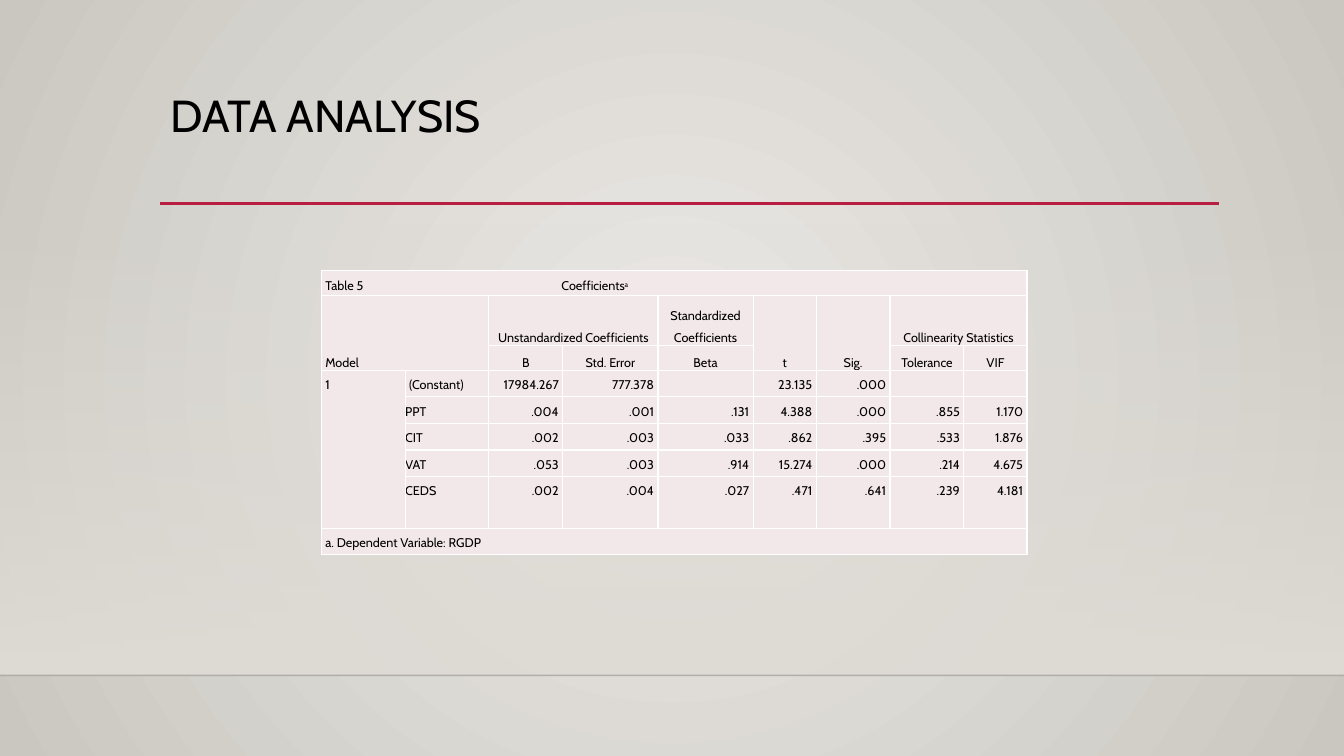
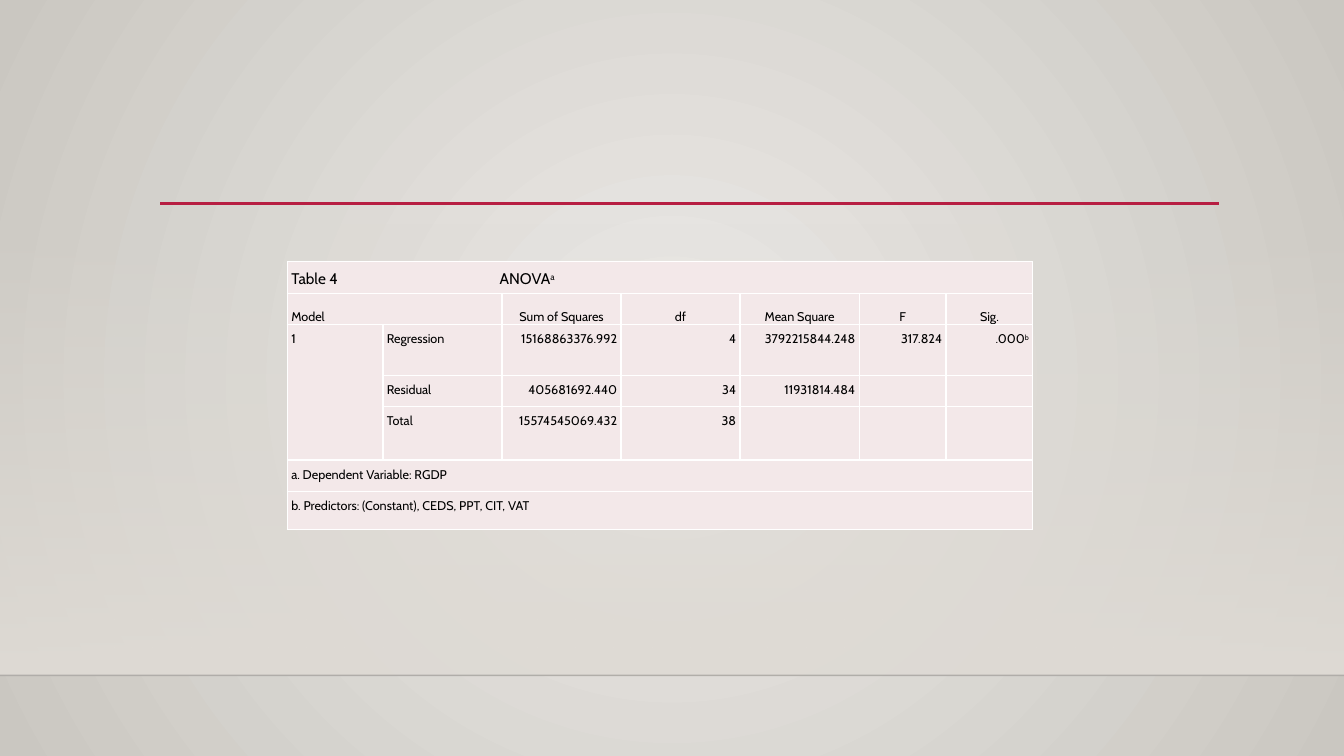
from itertools import product

from lxml.etree import SubElement
from pptx import Presentation
from pptx.dml.color import RGBColor
from pptx.enum.shapes import MSO_CONNECTOR as Connector, MSO_SHAPE as Shape
from pptx.enum.text import MSO_ANCHOR as Anchor, MSO_AUTO_SIZE as AutoSize, PP_ALIGN as Align
from pptx.oxml.ns import qn
from pptx.util import Cm, Pt

# Shared look
FONT = "Cabin"
BLACK, WHITE = "000000", "FFFFFF"
CRIMSON, SAND, CELL_PINK = "B71E42", "DFDBD5", "F3E8E9"
GLOW_CENTRE, GLOW_EDGE = "ECEAE7", "CAC7C1"
PAGE_WIDTH, PAGE_HEIGHT = 33.87, 19.05
RULE_LEFT, RULE_RIGHT, RULE_TOP = 4.04, 30.73, 5.13
BAND_TOP, FLOOR_TOP = 5.61, 17.02

# Table contents: "^" starts a superscript, None is an empty or merged cell
COEFFICIENTS = [
    ["Table 5\tCoefficients^a"] + [None] * 8,
    ["Model", None, "Unstandardized Coefficients", None, "Standardized Coefficients",
     "t", "Sig.", "Collinearity Statistics", None],
    [None, None, "B", "Std. Error", "Beta", None, None, "Tolerance", "VIF"],
    ["1", "(Constant)", "17984.267", "777.378", None, "23.135", ".000", None, None],
    [None, "PPT", ".004", ".001", ".131", "4.388", ".000", ".855", "1.170"],
    [None, "CIT", ".002", ".003", ".033", ".862", ".395", ".533", "1.876"],
    [None, "VAT", ".053", ".003", ".914", "15.274", ".000", ".214", "4.675"],
    [None, "CEDS", ".002", ".004", ".027", ".471", ".641", ".239", "4.181"],
    ["a. Dependent Variable: RGDP"] + [None] * 8,
]
ANOVA = [
    ["Table 4\tANOVA^a"] + [None] * 6,
    ["Model", None, "Sum of Squares", "df", "Mean Square", "F", "Sig."],
    ["1", "Regression", "15168863376.992", "4", "3792215844.248", "317.824", ".000^b"],
    [None, "Residual", "405681692.440", "34", "11931814.484", None, None],
    [None, "Total", "15574545069.432", "38", None, None, None],
    ["a. Dependent Variable: RGDP"] + [None] * 6,
    ["b. Predictors: (Constant), CEDS, PPT, CIT, VAT"] + [None] * 6,
]


def color(hex_code):
    return RGBColor.from_string(hex_code)


def set_font(paragraph, size):
    paragraph.font.name = FONT
    paragraph.font.size = Pt(size)
    paragraph.font.bold = False
    paragraph.font.color.rgb = color(BLACK)


def set_gradient(fill, first, last):
    fill.gradient()
    for stop, hex_code, position in zip(fill.gradient_stops, (first, last), (0, 1)):
        stop.color.rgb = color(hex_code)
        stop.position = position


def set_alpha(element, percent):
    """Make the first colour inside the element partly transparent."""
    first_color = next(element.iter(qn("a:srgbClr")))
    SubElement(first_color, qn("a:alpha")).set("val", str(percent * 1000))


# Background, band and rules, kept on the master
def add_rule(page, left, right, top, hex_code, weight):
    rule = page.shapes.add_connector(Connector.STRAIGHT, Cm(left), Cm(top), Cm(right), Cm(top))
    rule.line.color.rgb = color(hex_code)
    rule.line.width = Pt(weight)
    SubElement(rule._element.spPr, qn("a:effectLst"))
    return rule


def add_band(page):
    band = page.shapes.add_shape(Shape.RECTANGLE, 0, Cm(BAND_TOP), Cm(PAGE_WIDTH),
                                 Cm(FLOOR_TOP - BAND_TOP))
    band.shadow.inherit = False
    band.line.fill.background()
    set_gradient(band.fill, SAND, SAND)
    band.fill.gradient_angle = 270
    set_alpha(band._element.spPr, 0)
    return band


def style_master(master, page):
    """Draw the shared parts on a page and move them to the master."""
    set_gradient(master.background.fill, GLOW_CENTRE, GLOW_EDGE)
    glow = next(master._element.iter(qn("a:gradFill")))
    glow.remove(glow.find(qn("a:lin")))
    circle = SubElement(glow, qn("a:path"), path="circle")
    SubElement(circle, qn("a:fillToRect"), dict.fromkeys("ltrb", "50000"))

    band = add_band(page)
    floor = add_rule(page, 0, PAGE_WIDTH, FLOOR_TOP, "000001", 1)
    set_alpha(floor._element.spPr, 20)
    title_rule = add_rule(page, RULE_LEFT, RULE_RIGHT, RULE_TOP, CRIMSON, 2.5)
    for shape in (band, floor, title_rule):
        master.shapes._spTree.append(shape._element)


def set_title(page, text):
    title = page.shapes.title
    title.left, title.top = Cm(RULE_LEFT), Cm(2.24)
    title.width, title.height = Cm(RULE_RIGHT - RULE_LEFT), Cm(2.92)
    frame = title.text_frame
    frame.text = text
    frame.auto_size = AutoSize.NONE
    frame.vertical_anchor = Anchor.TOP
    para = frame.paragraphs[0]
    para.alignment = Align.LEFT
    para.line_spacing = 0.9
    set_font(para, 32)


# Tables
def set_borders(cell):
    properties = cell._tc.get_or_add_tcPr()
    for side in "LRTB":
        border = SubElement(properties, qn(f"a:ln{side}"), w=str(Pt(1)))
        fill = SubElement(border, qn("a:solidFill"))
        SubElement(fill, qn("a:srgbClr"), val=WHITE)


def write_cell(cell, text, size, align, anchor, tab=None):
    set_borders(cell)
    cell.fill.solid()
    cell.fill.fore_color.rgb = color(CELL_PINK)
    cell.margin_top = cell.margin_bottom = 0
    cell.margin_left = cell.margin_right = Cm(0.1)
    cell.vertical_anchor = anchor
    para = cell.text_frame.paragraphs[0]
    para.alignment = align
    para.line_spacing = Pt(16)
    if tab:
        stops = SubElement(para._p.get_or_add_pPr(), qn("a:tabLst"))
        SubElement(stops, qn("a:tab"), pos=str(Cm(tab)), algn="l")
    set_font(para, size)
    base, _, raised = (text or "").partition("^")
    if base:
        para.add_run().text = base
    if raised:
        span = para.add_run()
        span.text = raised
        span._r.get_or_add_rPr().set("baseline", "30000")


def cell_layout(row, column, header_rows):
    """Alignment and anchor follow from the part of the table."""
    if row == 0:
        return Align.LEFT, Anchor.MIDDLE
    if row <= header_rows:
        return (Align.CENTER if column > 1 else Align.LEFT), Anchor.BOTTOM
    return (Align.RIGHT if column > 1 else Align.LEFT), Anchor.TOP


def add_statistics(page, left, top, widths, heights, texts, merges, header_rows, caption_size, tab):
    frame = page.shapes.add_table(len(heights), len(widths), Cm(left), Cm(top),
                                  Cm(sum(widths)), Cm(sum(heights)))
    table = frame.table
    table.first_row = table.horz_banding = False
    for column, width in zip(table.columns, widths):
        column.width = Cm(width)
    for row, height in zip(table.rows, heights):
        row.height = Cm(height)
    for row, column in product(range(len(heights)), range(len(widths))):
        align, anchor = cell_layout(row, column, header_rows)
        caption = row == column == 0
        write_cell(table.cell(row, column), texts[row][column], 9 if row else caption_size,
                   align, anchor, tab if caption else None)
    for first, last in merges:
        table.cell(*first).merge(table.cell(*last))
    return table


def main():
    deck = Presentation()
    deck.slide_width, deck.slide_height = Cm(PAGE_WIDTH), Cm(PAGE_HEIGHT)
    title_only, blank = deck.slide_layouts[5], deck.slide_layouts[6]

    # Coefficients
    page = deck.slides.add_slide(title_only)
    style_master(deck.slide_master, page)
    set_title(page, "DATA ANALYSIS")
    table = add_statistics(
        page, 8.1, 6.81,
        widths=[2.11, 2.11, 1.86, 2.4, 2.4, 1.59, 1.86, 1.86, 1.59],
        heights=[0.63, 1.27, 0.63, 0.66, 0.67, 0.67, 0.67, 1.3, 0.66],
        texts=COEFFICIENTS,
        merges=[((0, 0), (0, 8)), ((1, 0), (2, 1)), ((1, 2), (1, 3)), ((1, 5), (2, 5)),
                ((1, 6), (2, 6)), ((1, 7), (1, 8)), ((3, 0), (7, 0)), ((8, 0), (8, 8))],
        header_rows=2, caption_size=9, tab=5.95)
    for row in range(4, 8):
        table.cell(row, 1).margin_left = 0

    # ANOVA
    page = deck.slides.add_slide(blank)
    add_statistics(
        page, 7.24, 6.59,
        widths=[2.41, 3, 3, 3, 3, 2.19, 2.19],
        heights=[0.8, 0.79, 1.28, 0.79, 1.34, 0.79, 0.96],
        texts=ANOVA,
        merges=[((0, 0), (0, 6)), ((1, 0), (1, 1)), ((2, 0), (4, 0)),
                ((5, 0), (5, 6)), ((6, 0), (6, 6))],
        header_rows=1, caption_size=11, tab=5.25)

    deck.save("out.pptx")


if __name__ == "__main__":
    main()
